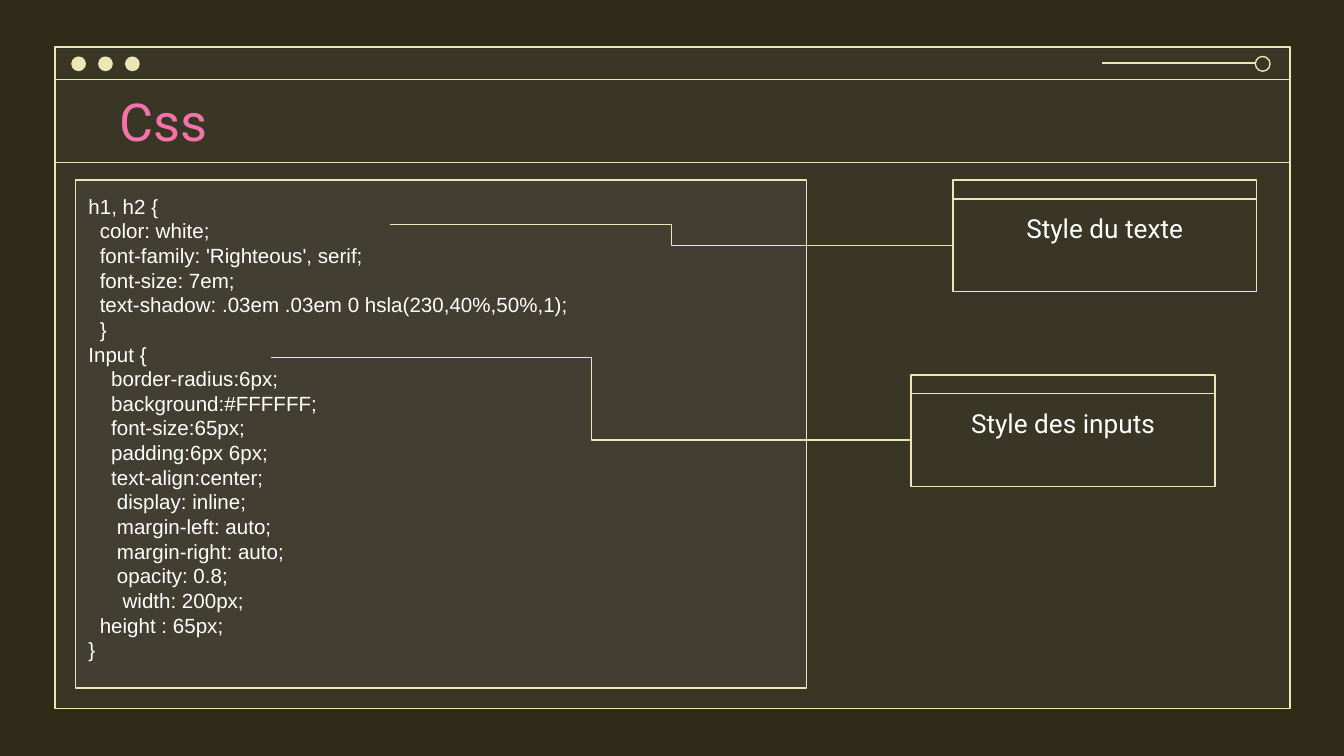
from dataclasses import dataclass

from lxml.etree import SubElement
from pptx import Presentation
from pptx.dml.color import RGBColor
from pptx.enum.shapes import MSO_CONNECTOR as CONN, MSO_SHAPE as SHAPE
from pptx.enum.text import MSO_ANCHOR as ANCHOR, MSO_AUTO_SIZE as AUTOSIZE, PP_ALIGN as ALIGN
from pptx.oxml.ns import qn
from pptx.util import Inches, Pt

BACKGROUND = RGBColor(0x2F, 0x2B, 0x19)
CREAM = RGBColor(0xEC, 0xE5, 0xB4)
GREY = RGBColor(0x7C, 0x7C, 0x7C)
PINK = RGBColor(0xF6, 0x73, 0xA9)
WHITE = RGBColor(0xFF, 0xFF, 0xFF)

CARD_W, CARD_BAR_H, CARD_BODY_H = 2.26, 0.14, 0.69
DOT = 0.11

CODE = """h1, h2 {
  color: white;
  font-family: 'Righteous', serif;
  font-size: 7em;
  text-shadow: .03em .03em 0 hsla(230,40%,50%,1);
  }
Input {
    border-radius:6px;
    background:#FFFFFF;
    font-size:65px;
    padding:6px 6px;
    text-align:center;
     display: inline;
     margin-left: auto;
     margin-right: auto;
     opacity: 0.8;
      width: 200px;
  height : 65px;
}"""


@dataclass
class Card:
    label: str
    left: float
    top: float
    link_from: tuple[float, float]


CARDS = [
    Card("Style du texte", 7.09, 1.34, (2.9, 1.67)),
    Card("Style des inputs", 6.78, 2.79, (2.02, 2.66)),
]


def add_box(shapes, kind, x: float, y: float, w: float, h: float,
            fill: RGBColor | None = None, alpha: int = 100, outlined: bool = True):
    sp = shapes.add_shape(kind, Inches(x), Inches(y), Inches(w), Inches(h))
    sp.shadow.inherit = False
    if fill is None:
        sp.fill.background()
    else:
        sp.fill.solid()
        sp.fill.fore_color.rgb = fill
        if alpha < 100:
            color = sp._element.spPr.find(qn("a:solidFill"))[0]
            SubElement(color, qn("a:alpha"), val=str(alpha * 1000))
    if outlined:
        sp.line.color.rgb = CREAM
        sp.line.width = Pt(0.75)
    else:
        sp.line.fill.background()
    return sp


def add_link(shapes, kind, x1: float, y1: float, x2: float, y2: float) -> None:
    line = shapes.add_connector(kind, Inches(x1), Inches(y1), Inches(x2), Inches(y2))
    line.line.color.rgb = CREAM
    line.line.width = Pt(0.75)
    SubElement(line._element.spPr, qn("a:effectLst"))


def setup_frame(sp, anchor):
    tf = sp.text_frame
    tf.word_wrap = True
    tf.auto_size = AUTOSIZE.NONE
    tf.vertical_anchor = anchor
    tf.margin_left = tf.margin_right = tf.margin_top = tf.margin_bottom = Inches(0.1)
    return tf


def write(p, text: str, size: float, font: str, color: RGBColor, align) -> None:
    p.alignment = align
    r = p.add_run()
    r.text = text
    r.font.size = Pt(size)
    r.font.name = font
    r.font.color.rgb = color


def place(sp, x: float, y: float, w: float, h: float) -> None:
    sp.left, sp.top, sp.width, sp.height = Inches(x), Inches(y), Inches(w), Inches(h)
    # Bring the placeholder in front of what is already drawn
    sp._element.getparent().append(sp._element)


def add_window(shapes) -> None:
    add_box(shapes, SHAPE.RECTANGLE, 0.41, 0.36, 9.18, 4.92, GREY, 14, outlined=False)
    for height in (4.92, 0.24):
        add_box(shapes, SHAPE.RECTANGLE, 0.41, 0.35, 9.19, height)
    for i in range(3):
        add_box(shapes, SHAPE.OVAL, 0.53 + 0.2 * i, 0.42, DOT, DOT, CREAM, outlined=False)
    add_box(shapes, SHAPE.OVAL, 9.34, 0.42, DOT, DOT)
    add_link(shapes, CONN.STRAIGHT, 8.2, 0.47, 9.34, 0.47)
    add_link(shapes, CONN.STRAIGHT, 0.41, 1.21, 9.59, 1.21)


def add_code(shapes) -> None:
    sp = add_box(shapes, SHAPE.RECTANGLE, 0.56, 1.34, 5.44, 3.78, GREY, 14)
    tf = setup_frame(sp, ANCHOR.TOP)
    for i, line in enumerate(CODE.split("\n")):
        p = tf.add_paragraph() if i else tf.paragraphs[0]
        p.line_spacing = Pt(13.2)
        write(p, line, 11, "Arial", WHITE, ALIGN.LEFT)


def add_card(shapes, card: Card, holder) -> None:
    body_top = card.top + CARD_BAR_H
    add_box(shapes, SHAPE.RECTANGLE, card.left, body_top, CARD_W, CARD_BODY_H)
    add_box(shapes, SHAPE.RECTANGLE, card.left, card.top, CARD_W, CARD_BAR_H)
    add_link(shapes, CONN.ELBOW, *card.link_from, card.left, body_top + CARD_BODY_H / 2)

    place(holder, card.left, body_top, CARD_W, CARD_BODY_H)
    p = setup_frame(holder, ANCHOR.TOP).paragraphs[0]
    pPr = p._p.get_or_add_pPr()
    pPr.set("marL", "0")
    pPr.set("indent", "0")
    SubElement(pPr, qn("a:buNone"))
    p.space_before = Pt(0)
    p.space_after = Pt(16)
    write(p, card.label, 14, "Roboto", WHITE, ALIGN.CENTER)


def main() -> None:
    prs = Presentation()
    prs.slide_width = Inches(10)
    prs.slide_height = prs.slide_width * 9 // 16
    slide = prs.slides.add_slide(prs.slide_layouts[3])  # title and two bodies
    slide.background.fill.solid()
    slide.background.fill.fore_color.rgb = BACKGROUND
    shapes = slide.shapes
    title, *holders = list(slide.placeholders)

    # Browser window and title
    add_window(shapes)
    place(title, 0.79, 0.59, 8.43, 0.62)
    p = setup_frame(title, ANCHOR.MIDDLE).paragraphs[0]
    write(p, "Css", 28, "Roboto", PINK, ALIGN.LEFT)

    # Code panel and its linked notes
    add_code(shapes)
    for card, holder in zip(CARDS, holders):
        add_card(shapes, card, holder)

    prs.save("out.pptx")


if __name__ == "__main__":
    main()
